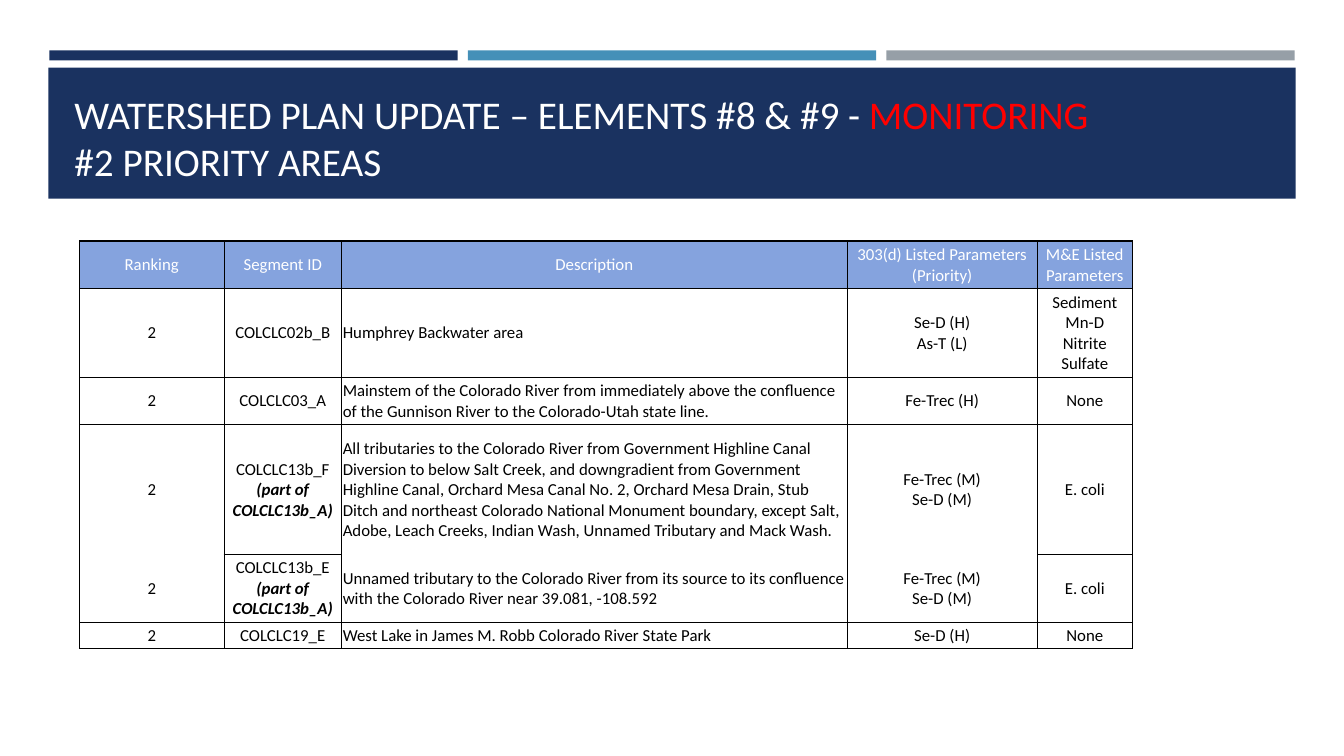
import pptx
import pptx.dml.color
import pptx.enum.shapes
import pptx.enum.text
import pptx.oxml
import pptx.oxml.ns
import pptx.util
from pptx.util import Inches

FONT = "Calibri"
COLORS = {
    "navy": "1A3260", "blue": "4590B8", "gray": "969FA7", "header": "85A3DE",
    "white": "FFFFFF", "black": "000000", "red": "FF0000",
}
COLUMN_WIDTHS = [1.43, 1.17, 5.01, 1.89, 0.94]
ROW_HEIGHTS = [0.47, 0.88, 0.47, 1.29, 0.67, 0.26]
DESCRIPTION = 2
OPEN_COLUMNS = (0, 2, 3)
OPEN_ABOVE_ROW = 4
PART_OF = "(part of COLCLC13b_A)"
ROWS = [
    ["Ranking", "Segment ID", "Description",
     "303(d) Listed Parameters (Priority)", "M&E Listed Parameters"],
    ["2", "COLCLC02b_B", "Humphrey Backwater area",
     "Se-D (H)\nAs-T (L)", "Sediment\nMn-D\nNitrite\nSulfate"],
    ["2", "COLCLC03_A",
     "Mainstem of the Colorado River from immediately above the confluence "
     "of the Gunnison River to the Colorado-Utah state line.",
     "Fe-Trec (H)", "None"],
    ["2", "COLCLC13b_F\n" + PART_OF,
     "All tributaries to the Colorado River from Government Highline Canal "
     "Diversion to below Salt Creek, and downgradient from Government "
     "Highline Canal, Orchard Mesa Canal No. 2, Orchard Mesa Drain, Stub "
     "Ditch and northeast Colorado National Monument boundary, except Salt, "
     "Adobe, Leach Creeks, Indian Wash, Unnamed Tributary and Mack Wash.",
     "Fe-Trec (M)\nSe-D (M)", "E. coli"],
    ["2", "COLCLC13b_E\n" + PART_OF,
     "Unnamed tributary to the Colorado River from its source to its "
     "confluence with the Colorado River near 39.081, -108.592",
     "Fe-Trec (M)\nSe-D (M)", "E. coli"],
    ["2", "COLCLC19_E", "West Lake in James M. Robb Colorado River State Park",
     "Se-D (H)", "None"],
]


def rgb(name):
    return pptx.dml.color.RGBColor.from_string(COLORS[name])


def add_bar(page, left, top, width, height, color):
    bar = page.shapes.add_shape(
        pptx.enum.shapes.MSO_SHAPE.RECTANGLE,
        Inches(left), Inches(top), Inches(width), Inches(height))
    bar.shadow.inherit = False
    bar.fill.solid()
    bar.fill.fore_color.rgb = rgb(color)
    bar.line.fill.background()


def add_span(para, text, size, color, emphasis=False):
    span = para.add_run()
    span.text = text
    span.font.name = FONT
    span.font.size = pptx.util.Pt(size)
    span.font.bold = emphasis
    span.font.italic = emphasis
    span.font.color.rgb = rgb(color)


def add_title(page):
    box = page.shapes.add_textbox(Inches(0.64), Inches(0.77), Inches(12.06), Inches(1.11))
    frame = box.text_frame
    frame.word_wrap = True
    frame.vertical_anchor = pptx.enum.text.MSO_ANCHOR.BOTTOM
    para = frame.paragraphs[0]
    add_span(para, "WATERSHED PLAN UPDATE – ELEMENTS #8 & #9 - ", 28, "white")
    add_span(para, "MONITORING", 28, "red")
    para.add_line_break()
    add_span(para, "#2 PRIORITY AREAS", 28, "white")


def edge_widths(row, column):
    open_column = column in OPEN_COLUMNS
    top = 1 if row <= 1 else 0.5
    bottom = 1 if row == 0 else 0.5
    if open_column and row == OPEN_ABOVE_ROW:
        top = 0
    if open_column and row == OPEN_ABOVE_ROW - 1:
        bottom = 0
    left = 1 if column == 0 else 0.5
    right = 1 if column == len(COLUMN_WIDTHS) - 1 else 0.5
    return {"lnL": left, "lnR": right, "lnT": top, "lnB": bottom}


def set_borders(cell, widths):
    properties = cell._tc.get_or_add_tcPr()
    for index, (edge, width) in enumerate(widths.items()):
        paint = "<a:noFill/>"
        if width:
            paint = f'<a:solidFill><a:srgbClr val="{COLORS["black"]}"/></a:solidFill>'
        line = pptx.oxml.parse_xml(
            f'<a:{edge} {pptx.oxml.ns.nsdecls("a")} w="{int(width * 12700)}">{paint}</a:{edge}>')
        properties.insert(index, line)


def fill_cell(cell, text, row, column):
    cell.fill.solid()
    cell.fill.fore_color.rgb = rgb("white" if row else "header")
    cell.vertical_anchor = pptx.enum.text.MSO_ANCHOR.MIDDLE
    cell.margin_left = cell.margin_right = cell.margin_top = Inches(0.01)
    cell.margin_bottom = 0
    para = cell.text_frame.paragraphs[0]
    align = pptx.enum.text.PP_ALIGN
    para.alignment = align.LEFT if row and column == DESCRIPTION else align.CENTER
    for index, line in enumerate(text.split("\n")):
        if index:
            para.add_line_break()
        add_span(para, line, 12, "black" if row else "white", line == PART_OF)
    set_borders(cell, edge_widths(row, column))


def add_segment_table(page):
    table = page.shapes.add_table(
        len(ROWS), len(COLUMN_WIDTHS), Inches(0.79), Inches(2.39),
        Inches(sum(COLUMN_WIDTHS)), Inches(sum(ROW_HEIGHTS))).table
    table.horz_banding = False
    for column, width in zip(table.columns, COLUMN_WIDTHS):
        column.width = Inches(width)
    for row, height in zip(table.rows, ROW_HEIGHTS):
        row.height = Inches(height)
    for row, texts in enumerate(ROWS):
        for column, text in enumerate(texts):
            fill_cell(table.cell(row, column), text, row, column)


def main():
    deck = pptx.Presentation()
    deck.slide_width = Inches(13.33)
    deck.slide_height = Inches(7.5)
    page = deck.slides.add_slide(deck.slide_layouts[6])
    for index, color in enumerate(("navy", "blue", "gray")):
        add_bar(page, 0.49 + index * 4.15, 0.5, 4.05, 0.1, color)
    add_bar(page, 0.48, 0.67, 12.37, 1.3, "navy")
    add_title(page)
    add_segment_table(page)
    deck.save("out.pptx")


if __name__ == "__main__":
    main()
